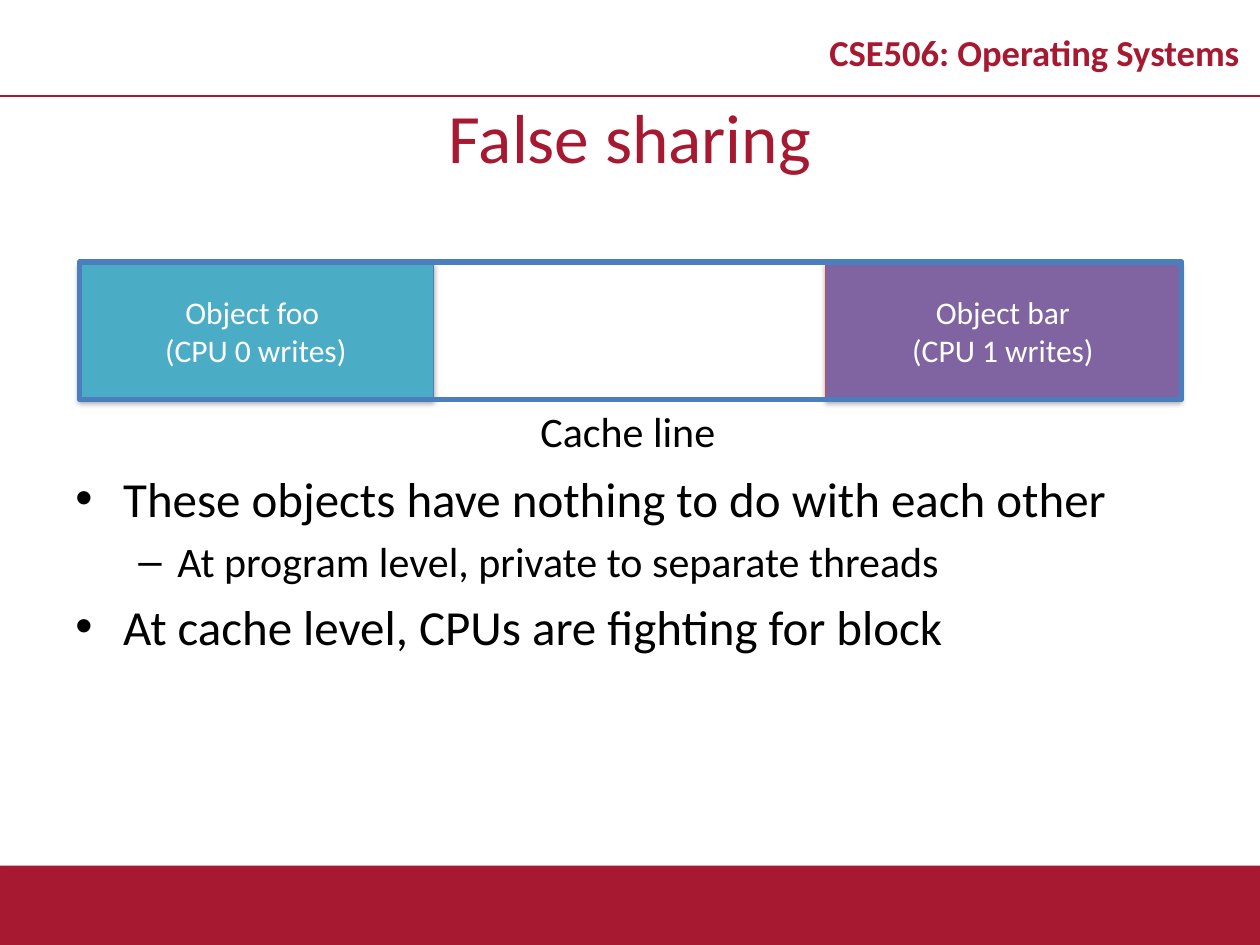
from lxml.etree import SubElement
from pptx import Presentation
from pptx.dml.color import RGBColor
from pptx.enum.shapes import MSO_CONNECTOR, MSO_SHAPE
from pptx.enum.text import MSO_ANCHOR, PP_ALIGN
from pptx.oxml.ns import qn
from pptx.util import Inches, Pt

RED, BLUE, BLACK, WHITE = "A71930", "4B7EBC", "000000", "FFFFFF"
CENTER = PP_ALIGN.CENTER


def color(code):
    return RGBColor.from_string(code)


def place(*sizes):
    return [Inches(size) for size in sizes]


def style(para, size, code, align=None, **extra):
    para.alignment = align
    form = {"name": "Calibri", "size": Pt(size), **extra}
    for key, value in form.items():
        setattr(para.font, key, value)
    para.font.color.rgb = color(code)


def write(frame, lines, size, code, align=None, **extra):
    frame.text = "\n".join(lines)
    for para in frame.paragraphs:
        style(para, size, code, align, **extra)


def shade(shape):
    """Add a soft shadow that falls straight down."""
    effects = shape._element.spPr.find(qn("a:effectLst"))
    outer = SubElement(effects, qn("a:outerShdw"), blurRad=str(Pt(3.1)),
                       dist=str(Pt(1.8)), dir="5400000", rotWithShape="0")
    black = SubElement(outer, qn("a:srgbClr"), val=BLACK)
    SubElement(black, qn("a:alpha"), val="35000")


def add_box(slide, at, fill=None, line=None, width=0.75, shadow=True):
    box = slide.shapes.add_shape(MSO_SHAPE.RECTANGLE, *place(*at))
    box.shadow.inherit = False
    if shadow:
        shade(box)
    if fill:
        box.fill.solid()
        box.fill.fore_color.rgb = color(fill)
    else:
        box.fill.background()
    if line:
        box.line.color.rgb = color(line)
        box.line.width = Pt(width)
    else:
        box.line.fill.background()
    return box


def add_text(slide, at, anchor=MSO_ANCHOR.TOP, wrap=True):
    frame = slide.shapes.add_textbox(*place(*at)).text_frame
    frame.word_wrap = wrap
    frame.vertical_anchor = anchor
    return frame


def add_rule(slide, top):
    rule = slide.shapes.add_connector(
        MSO_CONNECTOR.STRAIGHT, *place(0, top, 10, top))
    rule.line.color.rgb = color(RED)
    rule.line.width = Pt(1)
    SubElement(rule._element.spPr, qn("a:effectLst"))


def add_list(slide, at, items):
    levels = [("•", 0.38, 0.38, 28), ("–", 0.81, 0.31, 24)]
    frame = add_text(slide, at)
    frame.text = "\n".join(text for _, text in items)
    for num, (para, (level, _)) in enumerate(zip(frame.paragraphs, items)):
        mark, left, hang, size = levels[level]
        para.level = level
        props = para._p.get_or_add_pPr()
        props.set("marL", str(Inches(left)))
        props.set("indent", str(-Inches(hang)))
        SubElement(props, qn("a:buFont"), typeface="Arial")
        SubElement(props, qn("a:buChar"), char=mark)
        style(para, size, BLACK)
        if num:
            para.space_before = Pt(0.2 * size)


def main():
    deck = Presentation()
    deck.slide_width, deck.slide_height = place(10, 7.5)
    slide = deck.slides.add_slide(deck.slide_layouts[6])

    # Footer band, header rule and course name
    add_box(slide, (0, 6.87, 10, 0.63), RED)
    add_rule(slide, 0.76)
    head = add_text(slide, (6.42, 0.13, 3.58, 0.63), MSO_ANCHOR.MIDDLE)
    write(head, ["CSE506: Operating Systems"], 20.9, RED, CENTER, bold=True)
    head.paragraphs[0].line_spacing = 0.8

    # Title
    title = add_text(slide, (0, 0.76, 10, 0.63), MSO_ANCHOR.MIDDLE)
    write(title, ["False sharing"], 39.6, RED, CENTER)

    # Two objects at the ends of one cache line
    top, high = 2.08, 1.09
    objects = [
        (0.62, "4BACC6", BLUE, ["Object foo ", "(CPU 0 writes)"]),
        (6.55, "8064A2", "C0504D", ["Object bar", "(CPU 1 writes)"]),
    ]
    for left, fill, line, lines in objects:
        box = add_box(slide, (left, top, 2.82, high), fill, line)
        box.text_frame.vertical_anchor = MSO_ANCHOR.MIDDLE
        write(box.text_frame, lines, 18, WHITE, CENTER)

    # Bullets
    add_list(slide, (0.5, 3.67, 9, 3.15), [
        (0, "These objects have nothing to do with each other"),
        (1, "At program level, private to separate threads"),
        (0, "At cache level, CPUs are fighting for block"),
    ])

    # Cache line frame and its label
    add_box(slide, (0.63, top, 8.75, high), None, BLUE, 3, shadow=False)
    label = add_text(slide, (4.19, top + high, 1.71, 0.5), wrap=False)
    write(label, ["Cache line"], 24, BLACK)

    deck.save("out.pptx")


if __name__ == "__main__":
    main()
